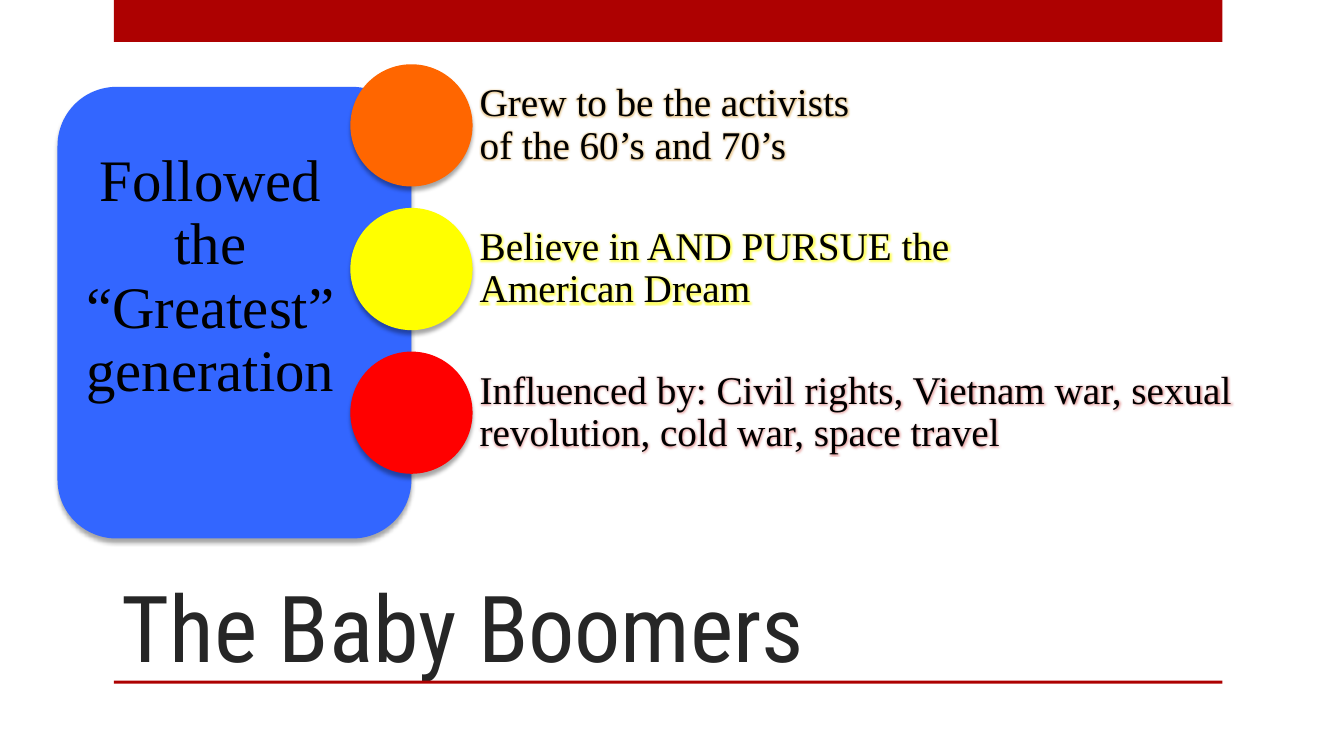
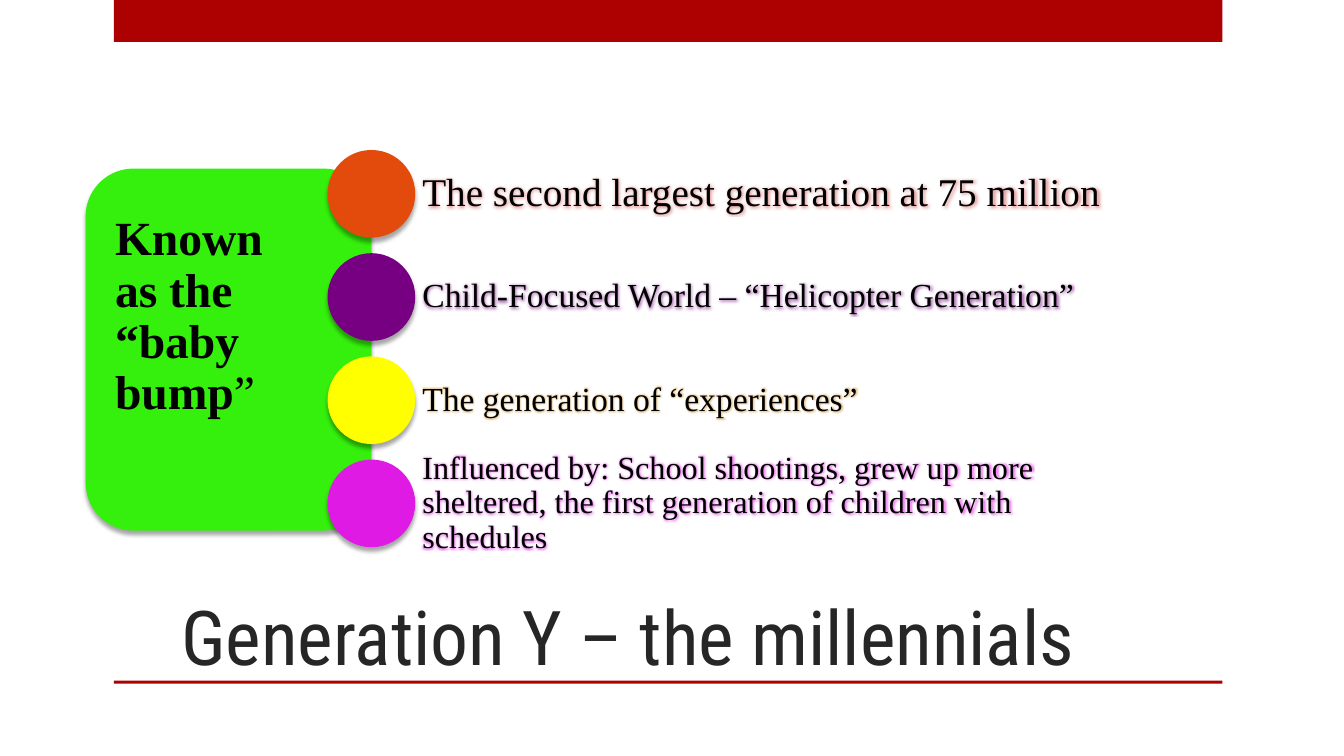
from lxml import etree
from pptx import Presentation
from pptx import util as u
from pptx.dml.color import RGBColor
from pptx.enum import shapes, text
from pptx.oxml import ns

Cm, Pt = u.Cm, u.Pt
KIND, ALIGN, ANCHOR = shapes.MSO_SHAPE, text.PP_ALIGN, text.MSO_ANCHOR

CRIMSON = RGBColor(0xAD, 0x01, 0x01)
INK = RGBColor(0x26, 0x26, 0x26)
BLACK = RGBColor(0, 0, 0)
BLUE = RGBColor(0x33, 0x66, 0xFF)
GREEN = RGBColor(0x35, 0xF0, 0x0C)
ORANGE = RGBColor(0xFF, 0x66, 0x00)
YELLOW = RGBColor(0xFF, 0xFF, 0x00)
RED = RGBColor(0xFF, 0x00, 0x00)
RUST = RGBColor(0xE3, 0x4B, 0x0D)
PURPLE = RGBColor(0x76, 0x00, 0x81)
PINK = RGBColor(0xE0, 0x1A, 0xE5)
TAN = RGBColor(0xE0, 0xB0, 0x60)
ROSE = RGBColor(0xD0, 0x50, 0x50)

HEAD, BODY = "Roboto Condensed", "Times New Roman"


def effect(tag, color, alpha, **attrs):
    """Make a glow or shadow element."""
    node = etree.Element(ns.qn("a:" + tag), {k: str(v) for k, v in attrs.items()})
    tint = etree.SubElement(node, ns.qn("a:srgbClr"), val=str(color))
    etree.SubElement(tint, ns.qn("a:alpha"), val=str(alpha * 1000))
    return node


def write(frame, runs, size, font=BODY, color=BLACK, align=ALIGN.LEFT,
          anchor=ANCHOR.MIDDLE, inset=(0, 0, 0, 0), glow=None, space=0.9):
    """Fill a text frame with (words, bold) runs."""
    frame.word_wrap = True
    frame.auto_size = text.MSO_AUTO_SIZE.NONE
    frame.vertical_anchor = anchor
    (frame.margin_left, frame.margin_top,
     frame.margin_right, frame.margin_bottom) = [Cm(i) for i in inset]
    para = frame.paragraphs[0]
    para.alignment = align
    para.line_spacing = space
    for words, bold in runs:
        run = para.add_run()
        run.text = words
        run.font.size, run.font.name, run.font.bold = Pt(size), font, bold
        run.font.color.rgb = color
        if glow is not None:
            box = etree.Element(ns.qn("a:effectLst"))
            box.append(effect("glow", glow, 60, rad=Pt(4)))
            run.font.fill._xPr.find(ns.qn("a:solidFill")).addnext(box)


class Deck:
    """Shared style and the slide being built."""

    def __init__(self):
        self.prs = Presentation()
        self.prs.slide_width, self.prs.slide_height = Cm(33.87), Cm(19.05)
        self.slide = None

    def start(self, title, left, size):
        self.slide = self.prs.slides.add_slide(self.prs.slide_layouts[5])
        # Top band and rule under the title
        for top, high in ((0, 1.06), (17.15, 0.08)):
            self.shape(KIND.RECTANGLE, 2.87, top, 27.94, high, CRIMSON)
        head = self.slide.shapes.title
        head.left, head.top = Cm(left), Cm(12.7)
        head.width, head.height = Cm(25.12), Cm(4.45)
        write(head.text_frame, [(title, False)], size, font=HEAD, color=INK,
              anchor=ANCHOR.BOTTOM, inset=(0.25, 0.13, 0.25, 0), space=1.0)

    def shape(self, kind, left, top, wide, high, fill, shadow=False):
        item = self.slide.shapes.add_shape(kind, Cm(left), Cm(top), Cm(wide), Cm(high))
        item.fill.solid()
        item.fill.fore_color.rgb = fill
        item.line.fill.background()
        item.shadow.inherit = False
        if shadow:
            box = item._element.spPr.find(ns.qn("a:effectLst"))
            box.append(effect("outerShdw", BLACK, 35, blurRad=Pt(3), dist=Pt(3),
                              dir=5400000, rotWithShape=0))

    def label(self, left, top, wide, high, runs, size, **style):
        box = self.slide.shapes.add_textbox(Cm(left), Cm(top), Cm(wide), Cm(high))
        write(box.text_frame, runs, size, **style)

    def panel(self, left, top, wide, high, fill):
        self.shape(KIND.ROUNDED_RECTANGLE, left, top, wide, high, fill, True)

    def points(self, mid, top, size, step, rows):
        """Stack discs centred on the panel edge, each with its text."""
        for i, (fill, glow, words, wide, points) in enumerate(rows):
            y = top + i * step
            self.shape(KIND.OVAL, mid - size / 2, y, size, size, fill, True)
            self.label(mid + size / 2, y, wide, size, [(words, False)], points,
                       inset=(0.18, 0.08, 0.18, 0.08), glow=glow)


def main():
    deck = Deck()

    # Baby boomers
    deck.start("The Baby Boomers", 2.82, 66)
    deck.panel(1.45, 2.19, 8.92, 11.38, BLUE)
    deck.label(1.75, 3.66, 7.11, 6.83, [("Followed the “Greatest” generation", False)],
               42, align=ALIGN.CENTER, anchor=ANCHOR.BOTTOM, inset=(0.3,) * 4)
    deck.points(10.37, 1.62, 3.08, 3.62, [
        (ORANGE, TAN, "Grew to be the activists of the 60’s and 70’s", 10, 28),
        (YELLOW, YELLOW, "Believe in AND PURSUE the American Dream", 13.84, 28),
        (RED, ROSE, "Influenced by: Civil rights, Vietnam war, sexual revolution, "
         "cold war, space travel", 20.93, 28),
    ])

    # Millennials
    deck.start("Generation Y – the millennials", 4.32, 54)
    deck.panel(2.16, 4.25, 7.2, 9.12, GREEN)
    deck.label(2.67, 5.36, 5.49, 5.46, [("Known as the “baby bump", True), ("”", False)],
               34, anchor=ANCHOR.BOTTOM, inset=(0.23,) * 4)
    deck.points(9.36, 3.78, 2.21, 2.6, [
        (RUST, ROSE, "The second largest generation at 75 million", 18.67, 28),
        (PURPLE, PURPLE, "Child-Focused World – “Helicopter Generation”", 20.9, 24),
        (YELLOW, TAN, "The generation of “experiences”", 12.95, 24),
        (PINK, PINK, "Influenced by: School shootings, grew up more sheltered, "
         "the first generation of children with schedules", 18.2, 23),
    ])

    deck.prs.save("out.pptx")


if __name__ == "__main__":
    main()
